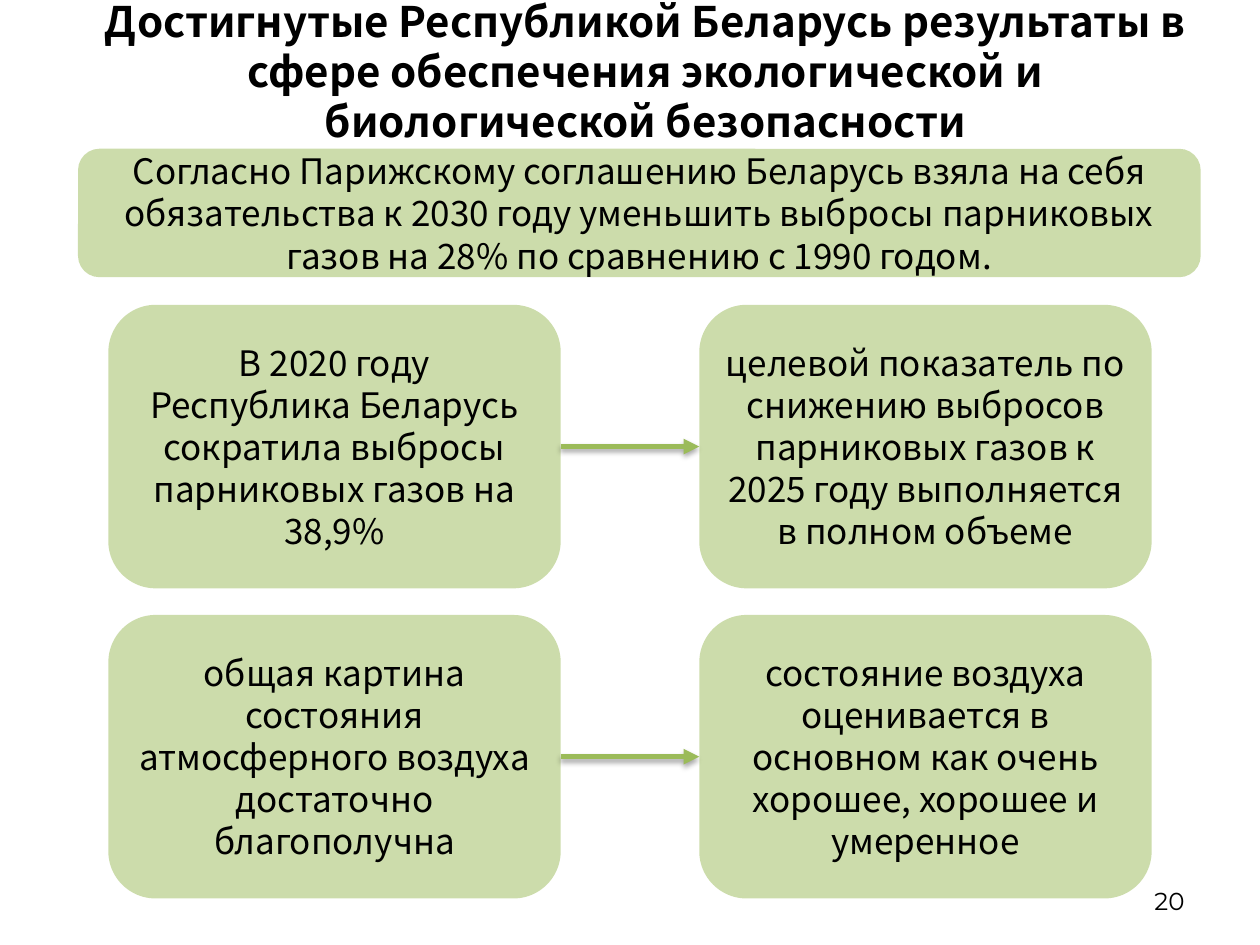
import pptx
import pptx.util
import pptx.dml.color
import pptx.enum.shapes
import pptx.enum.text
import pptx.oxml
import pptx.oxml.ns
from lxml import etree

Pt = pptx.util.Pt
qn = pptx.oxml.ns.qn
SANS = "Noto Sans CJK JP"
GREEN = "9BBB59"
BLACK = "000000"
CENTER = pptx.enum.text.PP_ALIGN.CENTER
RIGHT = pptx.enum.text.PP_ALIGN.RIGHT

TITLE = ("Достигнутые Республикой Беларусь результаты в сфере обеспечения "
         "экологической и биологической безопасности")
COMMITMENT = ("Согласно Парижскому соглашению Беларусь взяла на себя обязательства "
              "к 2030 году уменьшить выбросы парниковых газов на 28% "
              "по сравнению с 1990 годом.")
FINDINGS = [
    ("В 2020 году Республика Беларусь сократила выбросы парниковых газов на 38,9%",
     "целевой показатель по снижению выбросов парниковых газов к 2025 году "
     "выполняется в полном объеме"),
    ("общая картина состояния атмосферного воздуха достаточно благополучна",
     "состояние воздуха оценивается в основном как очень хорошее, хорошее и умеренное"),
]


def color(hex_string):
    return pptx.dml.color.RGBColor.from_string(hex_string)


def write(frame, text, size, font=SANS, align=CENTER, bold=False, spacing=None):
    frame.word_wrap = True
    frame.auto_size = pptx.enum.text.MSO_AUTO_SIZE.NONE
    frame.vertical_anchor = pptx.enum.text.MSO_ANCHOR.MIDDLE
    paragraph = frame.paragraphs[0]
    paragraph.text = text
    paragraph.alignment = align
    if spacing:
        paragraph.line_spacing = Pt(spacing)
    paragraph.font.size = Pt(size)
    paragraph.font.name = font
    paragraph.font.bold = bold
    paragraph.font.color.rgb = color(BLACK)


def add_title(slide, left, top, width, height):
    title = slide.shapes.title
    title.left, title.top = Pt(left), Pt(top)
    title.width, title.height = Pt(width), Pt(height)
    write(title.text_frame, TITLE, 24, bold=True, spacing=28.6)


def add_page_number(slide, left, top, width, height):
    number = slide.shapes.add_textbox(Pt(left), Pt(top), Pt(width), Pt(height))
    write(number.text_frame, "20", 14, font="Montserrat", align=RIGHT)


def add_panel(slide, text, left, top, width, height):
    """Half-transparent green rounded panel with centred text."""
    panel = slide.shapes.add_shape(
        pptx.enum.shapes.MSO_SHAPE.ROUNDED_RECTANGLE,
        Pt(left), Pt(top), Pt(width), Pt(height))
    panel.shadow.inherit = False
    panel.line.fill.background()
    panel.fill.solid()
    panel.fill.fore_color.rgb = color(GREEN)
    fill_color = panel.fill._xPr.find(qn("a:solidFill"))[0]
    etree.SubElement(fill_color, qn("a:alpha"), val="50000")
    write(panel.text_frame, text, 20, spacing=24)


def add_arrow(slide, start, end, y):
    arrow = slide.shapes.add_connector(
        pptx.enum.shapes.MSO_CONNECTOR.STRAIGHT, Pt(start), Pt(y), Pt(end), Pt(y))
    arrow.line.width = Pt(3)
    arrow.line.color.rgb = color(GREEN)
    etree.SubElement(arrow.line._get_or_add_ln(), qn("a:tailEnd"), type="triangle")
    effects = etree.SubElement(arrow._element.spPr, qn("a:effectLst"))
    shadow = etree.SubElement(
        effects, qn("a:outerShdw"), blurRad=str(Pt(3.1)), dist=str(Pt(1.8)),
        dir="5400000", rotWithShape="0")
    shadow_color = etree.SubElement(shadow, qn("a:srgbClr"), val=BLACK)
    etree.SubElement(shadow_color, qn("a:alpha"), val="35000")


def add_findings(slide, left, top, width, height):
    """Rows of two panels, each pair joined by an arrow."""
    panel_width, panel_height = 258.5, 162
    right = left + width - panel_width
    row_step = (height - panel_height) / (len(FINDINGS) - 1)
    for row, (fact, outcome) in enumerate(FINDINGS):
        y = top + row * row_step
        add_panel(slide, fact, left, y, panel_width, panel_height)
        add_arrow(slide, left + panel_width, right, y + panel_height / 2)
        add_panel(slide, outcome, right, y, panel_width, panel_height)


def main():
    deck = pptx.Presentation()
    deck.slide_width, deck.slide_height = Pt(720), Pt(540)
    slide = deck.slides.add_slide(deck.slide_layouts.get_by_name("Title Only"))
    add_page_number(slide, 516, 500.5, 168, 28.8)
    add_title(slide, 44.6, -0.7, 648, 82.8)
    add_panel(slide, COMMITMENT, 44.6, 85, 641.5, 73.4)
    add_findings(slide, 61.9, 174.2, 596.2, 339.2)
    deck.save("out.pptx")


if __name__ == "__main__":
    main()
